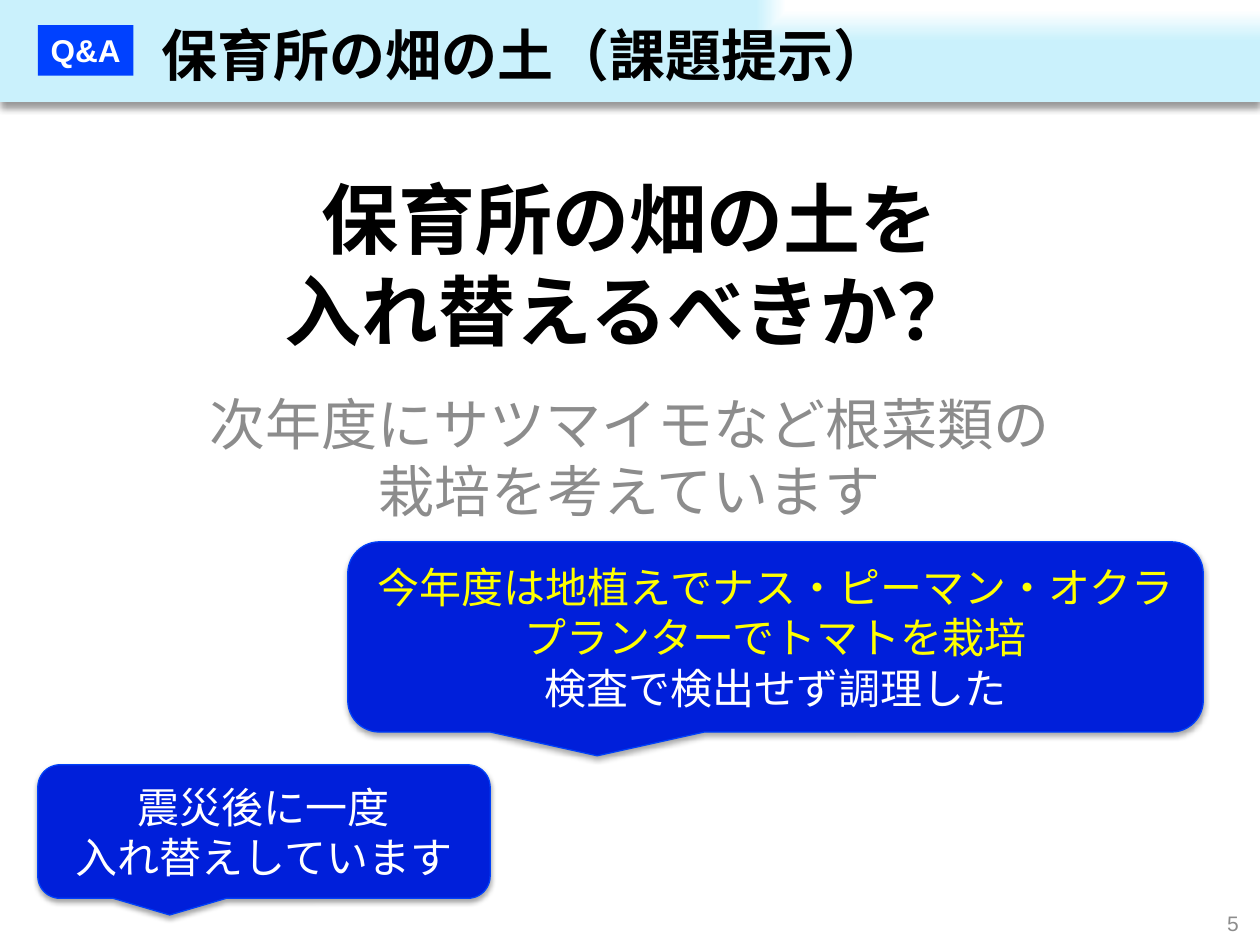
from lxml import etree
from pptx import Presentation
from pptx.dml.color import RGBColor
from pptx.enum.shapes import MSO_SHAPE as Shape
from pptx.enum.text import MSO_ANCHOR as Anchor, MSO_AUTO_SIZE as AutoSize, PP_ALIGN as Align
from pptx.oxml import parse_xml
from pptx.oxml.ns import qn
from pptx.util import Inches, Pt

NS = 'xmlns:a="http://schemas.openxmlformats.org/drawingml/2006/main"'
FONT = "Arial"
BLACK, WHITE, GRAY, YELLOW = "000000", "FFFFFF", "8C8C8C", "FFFF00"
BADGE_BLUE, CALLOUT_BLUE, CALLOUT_EDGE = "0041FF", "001FDA", "0040F9"

BANNER_AREA = (0, 0, 10, 0.81)
BANNER_STOPS = [(20, WHITE), (80, "CAF1FC")]
BANNER_SHADOW = dict(alpha=40, blur=4, distance=3)
CALLOUT_SHADOW = dict(alpha=35, blur=3.1, distance=1.8)

TEXTS = [
    ((0.75, 1.29, 8.5, 1.61), ["保育所の畑の土を\n入れ替えるべきか？"],
     dict(size=44, bold=True, anchor=Anchor.MIDDLE)),
    ((1.5, 3.04, 7, 1.92), ["次年度にサツマイモなど根菜類の栽培を考えています"],
     dict(size=32, colors=[GRAY])),
    ((7.6, 7.22, 2.33, 0.21), ["5"],
     dict(size=12, colors=[GRAY], align=Align.RIGHT, anchor=Anchor.MIDDLE)),
    ((1.18, 0.16, 6.04, 0.54), ["保育所の畑の土（課題提示）"],
     dict(size=32, bold=True, align=Align.LEFT, anchor=Anchor.MIDDLE,
          wrap=False, grow=True, inset=0)),
]
CALLOUTS = [
    ((2.76, 4.3, 6.79, 1.51),
     [("今年度は地植えでナス・ピーマン・オクラ", YELLOW),
      ("プランターでトマトを栽培", YELLOW),
      ("検査で検出せず調理した", WHITE)]),
    ((0.3, 6.07, 3.59, 1.06),
     [("震災後に一度", WHITE), ("入れ替えしています", WHITE)]),
]
BADGE = ((0.3, 0.2, 0.76, 0.4), "Q&A")


def rgb(color):
    return RGBColor.from_string(color)


def write(part, lines, *, size, colors=(BLACK,), bold=False, align=Align.CENTER,
          anchor=Anchor.TOP, wrap=True, grow=False, inset=0.05):
    frame = part.text_frame
    frame.word_wrap = wrap
    frame.auto_size = AutoSize.SHAPE_TO_FIT_TEXT if grow else AutoSize.NONE
    frame.vertical_anchor = anchor
    frame.margin_top = frame.margin_bottom = Inches(inset)
    for index, line in enumerate(lines):
        paragraph = frame.add_paragraph() if index else frame.paragraphs[0]
        paragraph.text = line
        paragraph.alignment = align
        for run in paragraph.runs:
            font = run.font
            font.name, font.size, font.bold = FONT, Pt(size), bold
            font.color.rgb = rgb(colors[min(index, len(colors) - 1)])
            east_asian = etree.Element(qn("a:ea"), typeface=FONT)
            font._element.find(qn("a:latin")).addnext(east_asian)


def add_block(slide, kind, area, fill=None, edge=None):
    block = slide.shapes.add_shape(kind, *map(Inches, area))
    block.shadow.inherit = False
    if fill:
        block.fill.solid()
        block.fill.fore_color.rgb = rgb(fill)
    if edge:
        block.line.color.rgb = rgb(edge)
        block.line.width = Pt(0.75)
    else:
        block.line.fill.background()
    return block


def add_shadow(block, *, alpha, blur, distance):
    effects = block._element.spPr.find(qn("a:effectLst"))
    effects.append(parse_xml(
        f'<a:outerShdw {NS} blurRad="{Pt(blur)}" dist="{Pt(distance)}" dir="5400000" '
        f'rotWithShape="0"><a:srgbClr val="{BLACK}"><a:alpha val="{alpha * 1000}"/>'
        '</a:srgbClr></a:outerShdw>'))


def add_corner_gradient(block, stops):
    marks = "".join(f'<a:gs pos="{position * 1000}"><a:srgbClr val="{color}"/></a:gs>'
                    for position, color in stops)
    block._element.spPr.find(qn("a:prstGeom")).addnext(parse_xml(
        f'<a:gradFill {NS} rotWithShape="1"><a:gsLst>{marks}</a:gsLst>'
        '<a:path path="rect"><a:fillToRect l="100000" b="100000"/></a:path></a:gradFill>'))


def main():
    deck = Presentation()
    deck.slide_width, deck.slide_height = Inches(10), Inches(7.5)
    slide = deck.slides.add_slide(deck.slide_layouts[6])

    banner = add_block(slide, Shape.RECTANGLE, BANNER_AREA)
    add_corner_gradient(banner, BANNER_STOPS)
    add_shadow(banner, **BANNER_SHADOW)

    for area, lines, style in TEXTS:
        write(slide.shapes.add_textbox(*map(Inches, area)), lines, **style)

    for area, lines in CALLOUTS:
        callout = add_block(slide, Shape.ROUNDED_RECTANGULAR_CALLOUT, area,
                            CALLOUT_BLUE, CALLOUT_EDGE)
        add_shadow(callout, **CALLOUT_SHADOW)
        words, colors = zip(*lines)
        write(callout, words, size=24, colors=colors, anchor=Anchor.MIDDLE)

    area, label = BADGE
    write(add_block(slide, Shape.RECTANGLE, area, BADGE_BLUE), [label],
          size=18, colors=[WHITE], bold=True, wrap=False, grow=True)

    deck.save("out.pptx")


if __name__ == "__main__":
    main()
